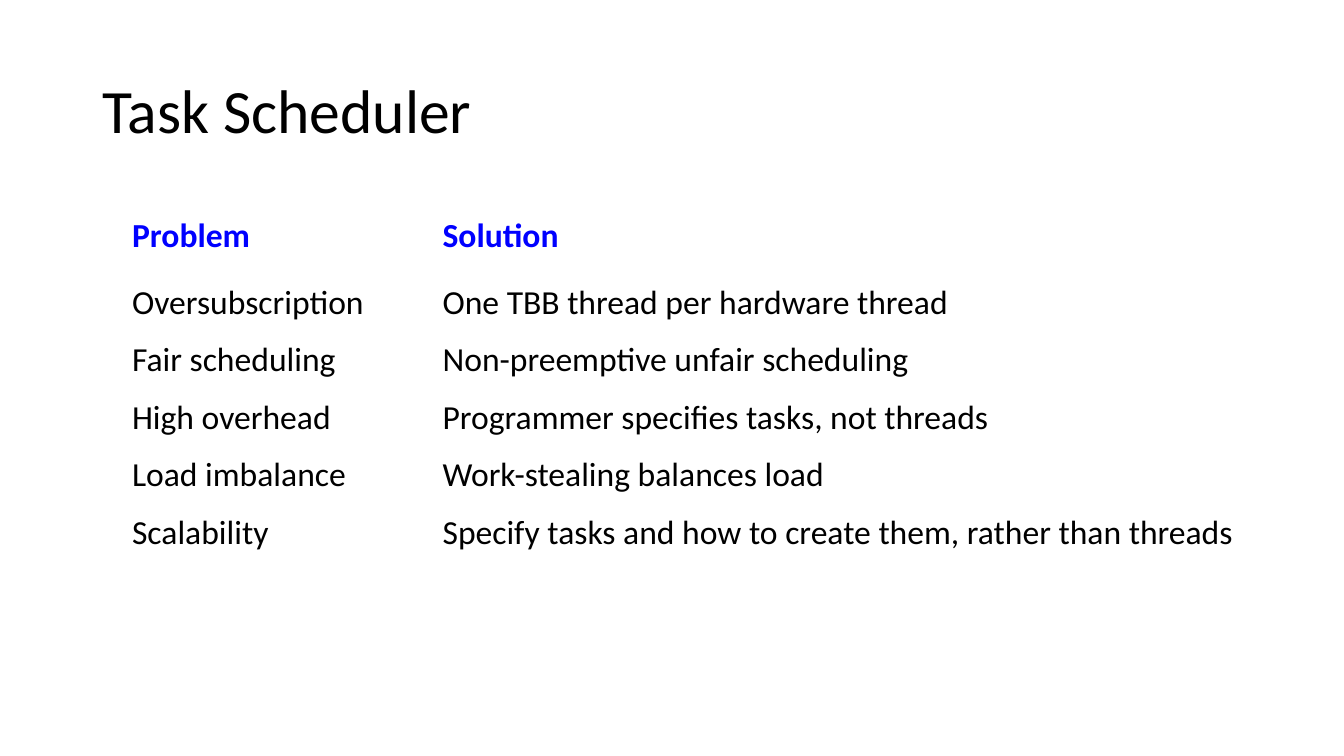
from pptx import Presentation
from pptx.dml.color import RGBColor
from pptx.enum.text import MSO_ANCHOR as Anchor
from pptx.util import Inches, Pt


def write(frame, lines, color, spacing, format_values):
    for index, line in enumerate(lines):
        para = frame.paragraphs[0] if index == 0 else frame.add_paragraph()
        para.line_spacing = spacing
        span = para.add_run()
        span.text = line
        span.font.color.rgb = RGBColor.from_string(color)
        for name, value in format_values.items():
            setattr(span.font, name, value)


deck = Presentation()
deck.slide_width = Inches(13.33)
deck.slide_height = Inches(7.5)
page = deck.slides.add_slide(deck.slide_layouts[6])

title = page.shapes.add_textbox(Inches(0.92), Inches(0.4), Inches(11.5), Inches(1.45))
title.text_frame.word_wrap = True
title.text_frame.vertical_anchor = Anchor.MIDDLE
write(title.text_frame, ["Task Scheduler"], "000000", 0.9, {"name": "Calibri", "size": Pt(44)})

columns = [
    ("Problem", 3.08, [
        "Oversubscription",
        "Fair scheduling",
        "High overhead",
        "Load imbalance",
        "Scalability",
    ]),
    ("Solution", 8.5, [
        "One TBB thread per hardware thread",
        "Non-preemptive unfair scheduling",
        "Programmer specifies tasks, not threads",
        "Work-stealing balances load",
        "Specify tasks and how to create them, rather than threads",
    ]),
]

table = page.shapes.add_table(
    2, len(columns), Inches(1.21), Inches(2.09), Inches(11.58), Inches(3.96)
).table
table.first_row = False
table.horz_banding = False
for row, height in zip(table.rows, (0.5, 3.46)):
    row.height = Inches(height)

for number, (heading, width, entries) in enumerate(columns):
    table.columns[number].width = Inches(width)
    styles = [([heading], "0000FF", 1.0, True), (entries, "000000", 1.4, False)]
    for level, (lines, color, spacing, bold) in enumerate(styles):
        cell = table.cell(level, number)
        cell.fill.background()
        write(cell.text_frame, lines, color, spacing,
              {"name": "Calibri", "size": Pt(24), "bold": bold})

deck.save("out.pptx")
